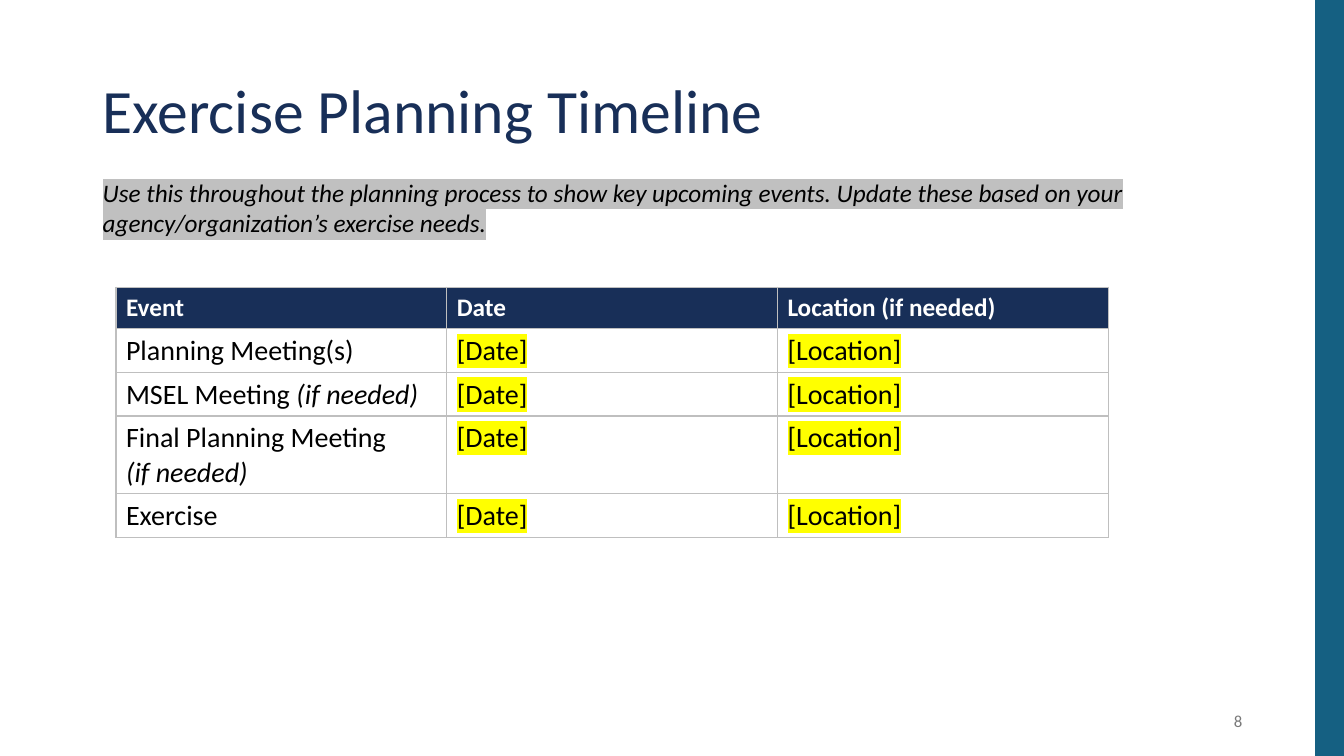
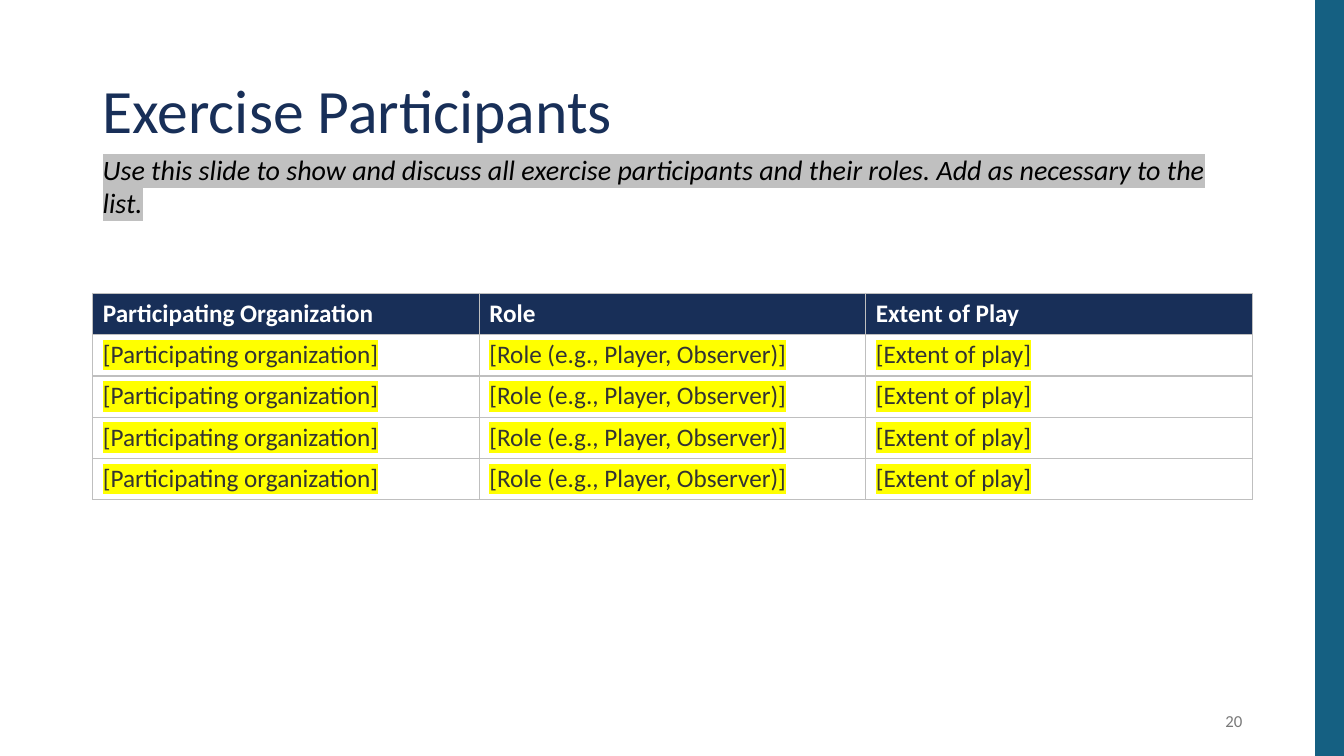
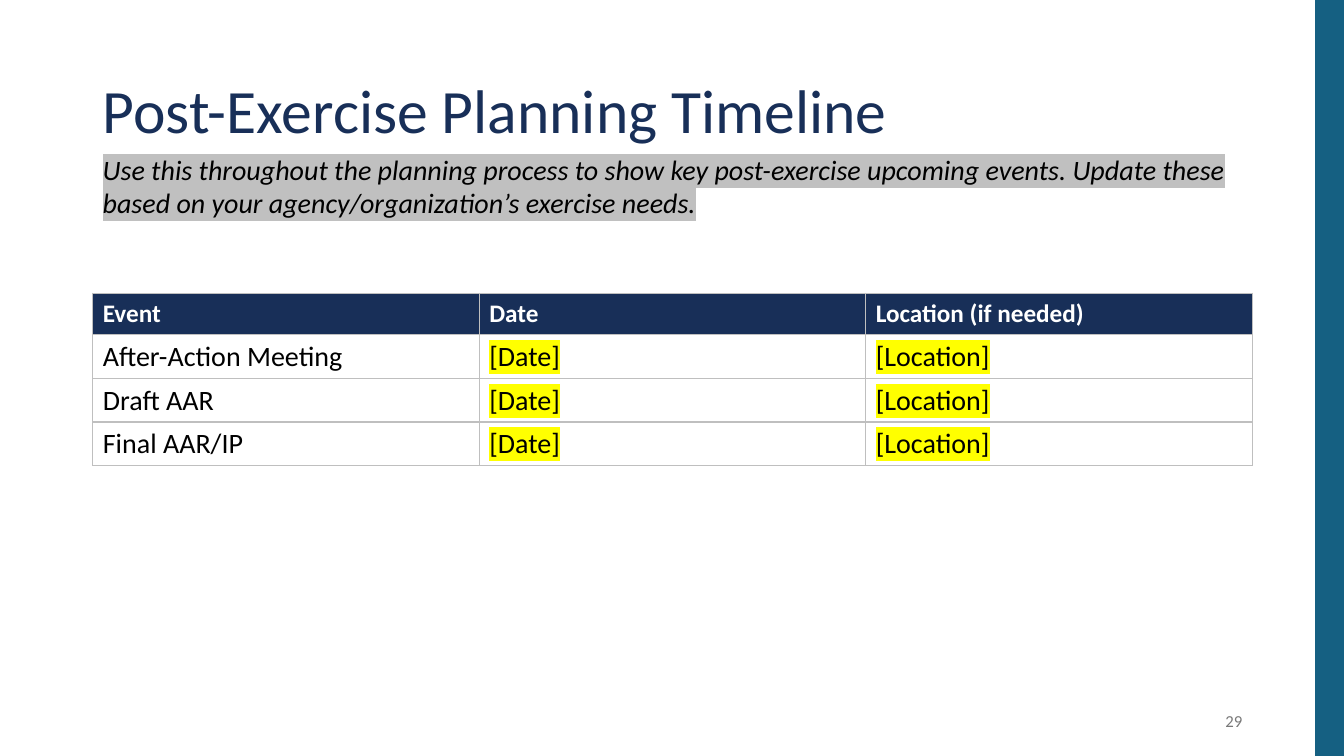
from dataclasses import dataclass

from lxml.etree import SubElement as Sub
from pptx import Presentation
from pptx.dml.color import RGBColor as RGB
from pptx.enum.shapes import MSO_SHAPE as Shape
from pptx.enum.text import MSO_ANCHOR as Anchor, MSO_AUTO_SIZE as Fit, PP_ALIGN as Align
from pptx.oxml.ns import qn
from pptx.util import Inches, Pt


@dataclass(frozen=True)
class Theme:
    font: str = "Calibri"
    navy: str = "182F58"
    teal: str = "156082"
    black: str = "000000"
    dark: str = "333333"
    gray: str = "797979"
    rule: str = "BFBFBF"
    shade: str = "C0C0C0"
    white: str = "FFFFFF"
    yellow: str = "FFFF00"
    title: int = 44
    large: int = 20
    base: int = 18
    small: int = 12


HINT = "(if needed)"


class Deck:
    """Slides on a grid: 12 columns between the margins, 75 rows from the top."""

    wide, high, edge = 13.33, 7.5, 0.92
    col, row = 11.5 / 12, 7.5 / 75

    def __init__(self, theme):
        self.theme = theme
        self.prs = Presentation()
        self.prs.slide_width = Inches(self.wide)
        self.prs.slide_height = Inches(self.high)

    def box(self, x, y, w, h):
        """Turn columns and rows into left, top, width and height."""
        return (Inches(self.edge + x * self.col), Inches(y * self.row),
                Inches(w * self.col), Inches(h * self.row))

    def page(self, title, num):
        """Start a slide with its side band, title and number."""
        t = self.theme
        self.slide = self.prs.slides.add_slide(self.prs.slide_layouts[6])
        self.band()
        para = self.text(title, (0, 4, 12, 14.5), t.title, t.navy, Anchor.MIDDLE)
        para.line_spacing = 0.9
        para = self.text(str(num), (8.87, 69.5, 3.13, 4), t.small, t.gray, Anchor.MIDDLE)
        para.alignment = Align.RIGHT

    def band(self):
        band = self.slide.shapes.add_shape(Shape.RECTANGLE, *self.box(12.65, 0, 0.31, 75))
        band.shadow.inherit = False
        band.fill.solid()
        band.fill.fore_color.rgb = RGB.from_string(self.theme.teal)
        band.line.fill.background()

    def text(self, words, place, size, color, anchor=Anchor.TOP, **look):
        """Add a text box and return its first paragraph."""
        frame = self.slide.shapes.add_textbox(*self.box(*place)).text_frame
        frame.word_wrap = True
        frame.vertical_anchor = anchor
        self.put(frame, words, size, color, **look)
        return frame.paragraphs[0]

    def note(self, words, size, y=14.6, w=12, h=7.7):
        t = self.theme
        para = self.text(words, (0, y, w, h), size, t.black, mark=t.shade)
        para.font.italic = True
        self.slide.shapes[-1].text_frame.auto_size = Fit.SHAPE_TO_FIT_TEXT

    def put(self, frame, words, size, color, bold=False, mark=None, hint=None):
        """Fill a frame line by line; the hint, where it occurs, is italic."""
        for i, line in enumerate(words.split("\n")):
            para = frame.add_paragraph() if i else frame.paragraphs[0]
            font = para.font
            font.name, font.size, font.bold = self.theme.font, Pt(size), bold
            font.color.rgb = RGB.from_string(color)
            for part in line.partition(hint) if hint else [line]:
                if not part:
                    continue
                run = para.add_run()
                run.text = part
                if part == hint:
                    run.font.italic = True
                if mark:
                    high = Sub(run._r.get_or_add_rPr(), qn("a:highlight"))
                    Sub(high, qn("a:srgbClr"), val=mark)

    def edges(self, cell):
        """Draw thin rules on all four sides of a cell."""
        props = cell._tc.get_or_add_tcPr()
        for side in "LRTB":
            line = Sub(props, qn(f"a:ln{side}"), w=str(int(Pt(1))))
            fill = Sub(line, qn("a:solidFill"))
            Sub(fill, qn("a:srgbClr"), val=self.theme.rule)

    def table(self, rows, size, color, x=0, y=29.1, w=12):
        t = self.theme
        place = self.box(x, y, w, 4.1 * len(rows))
        grid = self.slide.shapes.add_table(len(rows), len(rows[0]), *place).table
        grid.horz_banding = False
        for r, row in enumerate(rows):
            for c, words in enumerate(row):
                cell = grid.cell(r, c)
                self.edges(cell)
                cell.fill.solid()
                cell.fill.fore_color.rgb = RGB.from_string(t.white if r else t.navy)
                if r:
                    mark = t.yellow if words.startswith("[") else None
                    self.put(cell.text_frame, words, size, color, mark=mark, hint=HINT)
                else:
                    self.put(cell.text_frame, words, t.base, t.white, bold=True)


def dates(*events):
    """List events with open dates and places."""
    head = ("Event", "Date", "Location (if needed)")
    return [head] + [(event, "[Date]", "[Location]") for event in events]


def main():
    t = Theme()
    deck = Deck(t)

    deck.page("Exercise Planning Timeline", 8)
    deck.note("Use this throughout the planning process to show key upcoming events. "
              "Update these based on your agency/organization’s exercise needs.",
              t.base, y=17.1, w=11.62, h=7.1)
    deck.table(dates("Planning Meeting(s)", "MSEL Meeting (if needed)",
                     "Final Planning Meeting\n(if needed)", "Exercise"),
               t.large, t.black, x=0.24, y=28.5, w=10.27)

    deck.page("Exercise Participants", 20)
    deck.note("Use this slide to show and discuss all exercise participants and their "
              "roles. Add as necessary to the list.", t.large)
    head = ("Participating Organization", "Role", "Extent of Play")
    blank = ("[Participating organization]", "[Role (e.g., Player, Observer)]",
             "[Extent of play]")
    deck.table([head] + [blank] * 4, t.base, t.dark)

    deck.page("Post-Exercise Planning Timeline", 29)
    deck.note("Use this throughout the planning process to show key post-exercise "
              "upcoming events. Update these based on your agency/organization’s "
              "exercise needs.", t.large)
    deck.table(dates("After-Action Meeting", "Draft AAR", "Final AAR/IP"),
               t.large, t.black)

    deck.prs.save("out.pptx")


if __name__ == "__main__":
    main()
